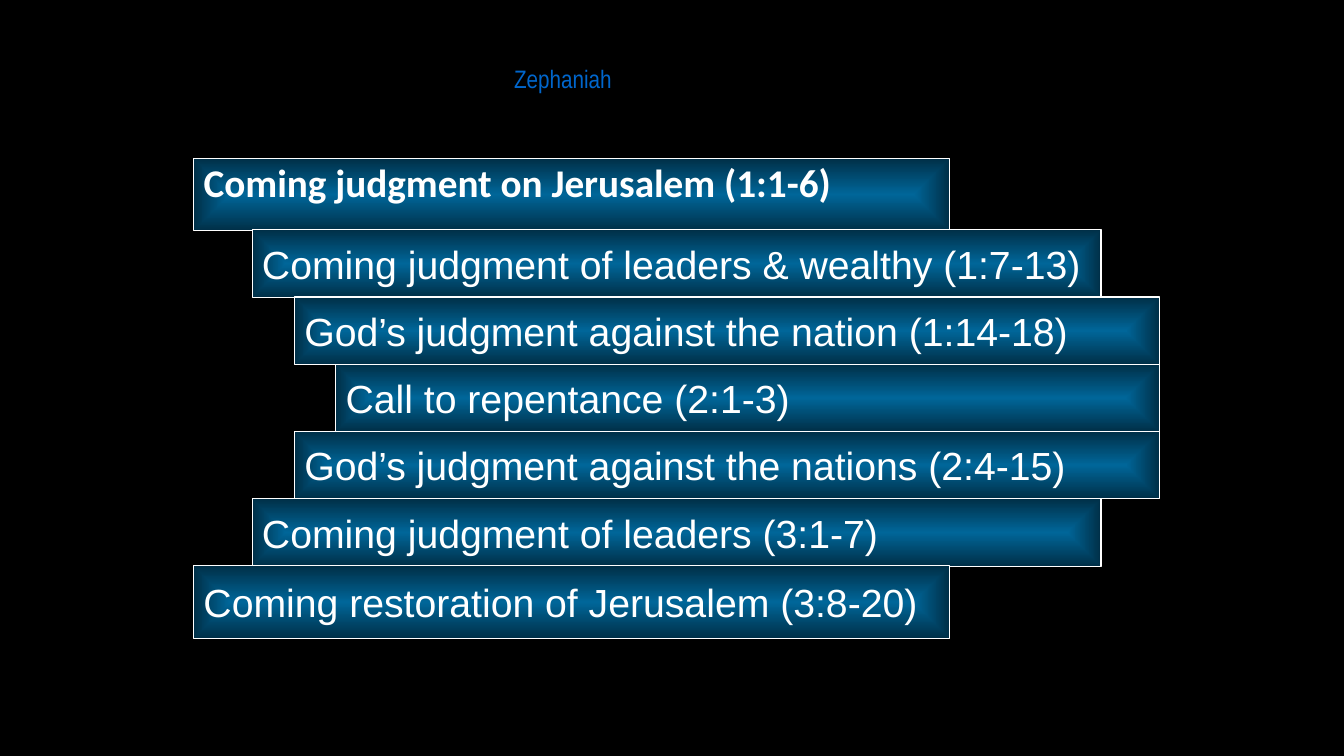
import pptx
import pptx.util
import pptx.dml.color
import pptx.enum.shapes
import pptx.enum.text
import pptx.oxml
import pptx.oxml.ns

Inches = pptx.util.Inches
Pt = pptx.util.Pt
RGBColor = pptx.dml.color.RGBColor
Anchor = pptx.enum.text.MSO_ANCHOR

BLACK = RGBColor(0x00, 0x00, 0x00)
WHITE = RGBColor(0xFF, 0xFF, 0xFF)
BLUE = RGBColor(0x00, 0x66, 0xCC)
TEAL = RGBColor(0x00, 0x66, 0x99)
DEEP = RGBColor(0x00, 0x2F, 0x47)

GLOW = (
    f'<a:path {pptx.oxml.ns.nsdecls("a")} path="shape">'
    '<a:fillToRect l="50000" t="50000" r="50000" b="50000"/></a:path>'
)


class Deck:
    body = {"name": "Arial", "size": Pt(28), "bold": False}
    head = {"name": "Calibri", "size": Pt(28), "bold": True}
    label = {"name": "Arial Narrow", "size": Pt(18), "bold": False}

    def __init__(self):
        self.prs = pptx.Presentation()
        self.prs.slide_width = Inches(13.33)
        self.prs.slide_height = Inches(7.5)
        self.slide = self.prs.slides.add_slide(self.prs.slide_layouts[5])
        back = self.slide.background.fill
        back.solid()
        back.fore_color.rgb = BLACK

    def letter(self, shape, text, style, color, anchor):
        frame = shape.text_frame
        frame.text = text
        frame.auto_size = pptx.enum.text.MSO_AUTO_SIZE.NONE
        frame.word_wrap = True
        frame.vertical_anchor = anchor
        para = frame.paragraphs[0]
        para.alignment = pptx.enum.text.PP_ALIGN.LEFT
        font = para.runs[0].font
        for key, value in style.items():
            setattr(font, key, value)
        font.color.rgb = color
        return para

    def paint(self, shape):
        shape.fill.gradient()
        for stop, color in zip(shape.fill.gradient_stops, (TEAL, DEEP)):
            stop.color.rgb = color
        grad = shape.element.spPr.find(pptx.oxml.ns.qn("a:gradFill"))
        grad.replace(grad.find(pptx.oxml.ns.qn("a:lin")), pptx.oxml.parse_xml(GLOW))
        shape.line.color.rgb = WHITE
        shape.line.width = Pt(0.75)

    def title(self, text, left, top, width, height):
        shape = self.slide.shapes.title
        shape.left, shape.top = Inches(left), Inches(top)
        shape.width, shape.height = Inches(width), Inches(height)
        self.paint(shape)
        para = self.letter(shape, text, self.head, WHITE, Anchor.TOP)
        para.line_spacing = 0.9

    def bar(self, text, left, top, width, height):
        shape = self.slide.shapes.add_shape(
            pptx.enum.shapes.MSO_SHAPE.RECTANGLE,
            Inches(left), Inches(top), Inches(width), Inches(height),
        )
        shape.shadow.inherit = False
        self.paint(shape)
        self.letter(shape, text, self.body, WHITE, Anchor.MIDDLE)

    def note(self, text, left, top, width, height):
        box = self.slide.shapes.add_textbox(
            Inches(left), Inches(top), Inches(width), Inches(height)
        )
        self.letter(box, text, self.label, BLUE, Anchor.TOP)


def main():
    deck = Deck()
    deck.title("Coming judgment on Jerusalem (1:1-6)", 1.92, 1.57, 7.5, 0.72)
    bars = [
        ("Coming judgment of leaders & wealthy (1:7-13)", 2.5, 8.42, 0.67),
        ("God’s judgment against the nation (1:14-18)", 2.92, 8.58, 0.67),
        ("Call to repentance (2:1-3)", 3.33, 8.17, 0.67),
        ("God’s judgment against the nations (2:4-15)", 2.92, 8.58, 0.67),
        ("Coming judgment of leaders (3:1-7)", 2.5, 8.42, 0.67),
        ("Coming restoration of Jerusalem (3:8-20)", 1.92, 7.5, 0.72),
    ]
    for row, (text, left, width, height) in enumerate(bars):
        deck.bar(text, left, 2.28 + row * 2 / 3, width, height)
    deck.note("Zephaniah", 5, 0.58, 3, 0.83)
    deck.prs.save("out.pptx")


if __name__ == "__main__":
    main()
